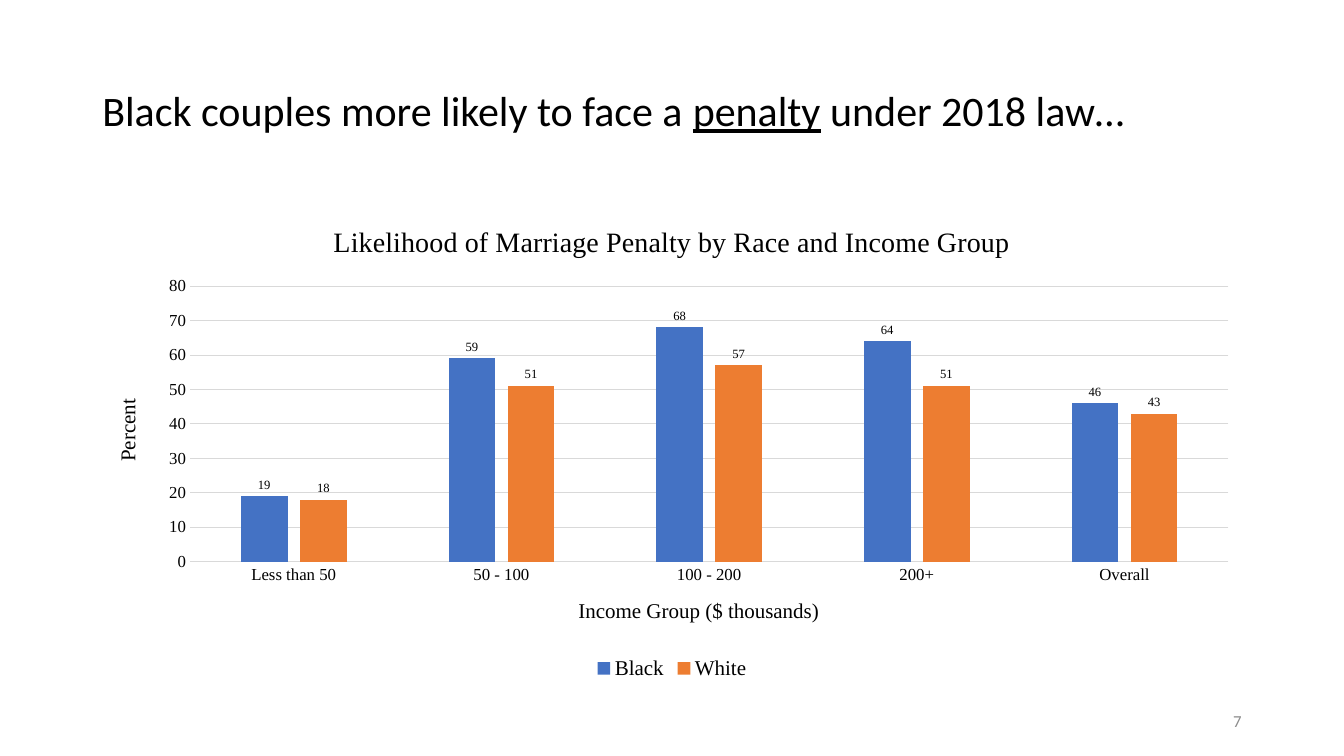
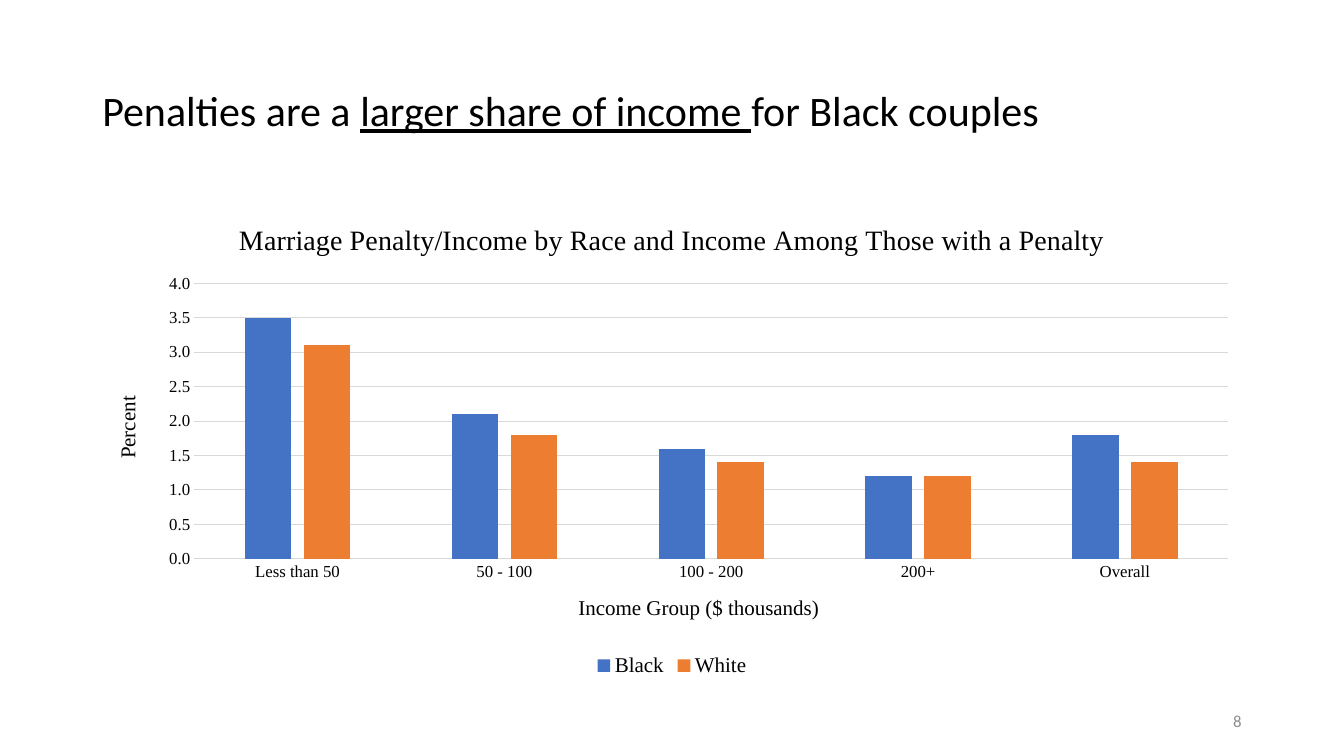
import pptx
import pptx.util
import pptx.chart.data
import pptx.dml.color
import pptx.enum.chart
import pptx.enum.text

Pt = pptx.util.Pt
hues = {"ink": "000000", "page": "8C8C8C", "grid": "D9D9D9", "Black": "4472C4", "White": "ED7D31"}
rgb = {name: pptx.dml.color.RGBColor.from_string(code) for name, code in hues.items()}
sans, serif = "Calibri", "Times New Roman"
groups = ["Less than 50", "50 - 100", "100 - 200", "200+", "Overall"]
left, wide = 66, 828

slides = [
    {
        "head": ["Black couples more likely to face a ", "penalty", " under 2018 law…"],
        "page": "7",
        "top": 146,
        "title": "Likelihood of Marriage Penalty by Race and Income Group",
        "scale": {"minimum_scale": 0, "maximum_scale": 80, "major_unit": 10},
        "digits": "0",
        "labels": True,
        "data": {"Black": [19, 59, 68, 64, 46], "White": [18, 51, 57, 51, 43]},
    },
    {
        "head": ["Penalties are a ", "larger share of income ", "for Black couples"],
        "page": "8",
        "top": 144,
        "title": "Marriage Penalty/Income by Race and Income Among Those with a Penalty",
        "scale": {"minimum_scale": 0, "maximum_scale": 4, "major_unit": 0.5},
        "digits": "0.0",
        "labels": False,
        "data": {"Black": [3.5, 2.1, 1.6, 1.2, 1.8], "White": [3.1, 1.8, 1.4, 1.2, 1.4]},
    },
]


def style(font, size, face=serif, hue="ink", line=False):
    look = {"size": Pt(size), "name": face, "bold": False, "underline": line}
    for key, value in look.items():
        setattr(font, key, value)
    font.color.rgb = rgb[hue]


def write(frame, runs, size, face=serif, hue="ink"):
    para = frame.paragraphs[0]
    for spot, text in enumerate(runs):
        run = para.add_run()
        run.text = text
        style(run.font, size, face, hue, spot == 1)
    return para


deck = pptx.Presentation()
deck.slide_width, deck.slide_height = Pt(960), Pt(540)

for item in slides:
    slide = deck.slides.add_slide(deck.slide_layouts[6])
    head = slide.shapes.add_textbox(Pt(left), Pt(28.75), Pt(wide), Pt(104.4))
    foot = slide.shapes.add_textbox(Pt(678), Pt(500.5), Pt(216), Pt(28.75))
    for box in (head, foot):
        box.text_frame.word_wrap = True
        box.text_frame.vertical_anchor = pptx.enum.text.MSO_ANCHOR.MIDDLE
    write(head.text_frame, item["head"], 30, sans).line_spacing = 0.9
    write(foot.text_frame, [item["page"]], 12, sans, "page").alignment = pptx.enum.text.PP_ALIGN.RIGHT

    data = pptx.chart.data.CategoryChartData(number_format=item["digits"])
    data.categories = groups
    for name, values in item["data"].items():
        data.add_series(name, values)
    kind = pptx.enum.chart.XL_CHART_TYPE.COLUMN_CLUSTERED
    chart = slide.shapes.add_chart(kind, Pt(left), Pt(item["top"]), Pt(wide), Pt(342.7), data).chart
    style(chart.font, 10)
    chart.has_title = True
    write(chart.chart_title.text_frame, [item["title"]], 20)
    chart.chart_title.include_in_layout = False

    chart.has_legend = True
    chart.legend.position = pptx.enum.chart.XL_LEGEND_POSITION.BOTTOM
    chart.legend.include_in_layout = False
    style(chart.legend.font, 15)

    across, up = chart.category_axis, chart.value_axis
    for axis, text in ((across, "Income Group ($ thousands)"), (up, "Percent")):
        write(axis.axis_title.text_frame, [text], 15)
        style(axis.tick_labels.font, 12)
        axis.major_tick_mark = axis.minor_tick_mark = pptx.enum.chart.XL_TICK_MARK.NONE
    for key, value in item["scale"].items():
        setattr(up, key, value)
    up.tick_labels.number_format = item["digits"]
    up.tick_labels.number_format_is_linked = False
    up.has_major_gridlines = True
    up.format.line.fill.background()
    for line in (across.format.line, up.major_gridlines.format.line):
        line.color.rgb = rgb["grid"]
        line.width = Pt(0.75)

    plot = chart.plots[0]
    for key, value in {"gap_width": 219, "overlap": -27, "vary_by_categories": False}.items():
        setattr(plot, key, value)
    for bars in plot.series:
        bars.format.fill.solid()
        bars.format.fill.fore_color.rgb = rgb[bars.name]
        bars.invert_if_negative = False
        if item["labels"]:
            marks = bars.data_labels
            style(marks.font, 9)
            form = {
                "show_value": True,
                "number_format": item["digits"],
                "number_format_is_linked": False,
                "position": pptx.enum.chart.XL_LABEL_POSITION.OUTSIDE_END,
            }
            for key, value in form.items():
                setattr(marks, key, value)

deck.save("out.pptx")
